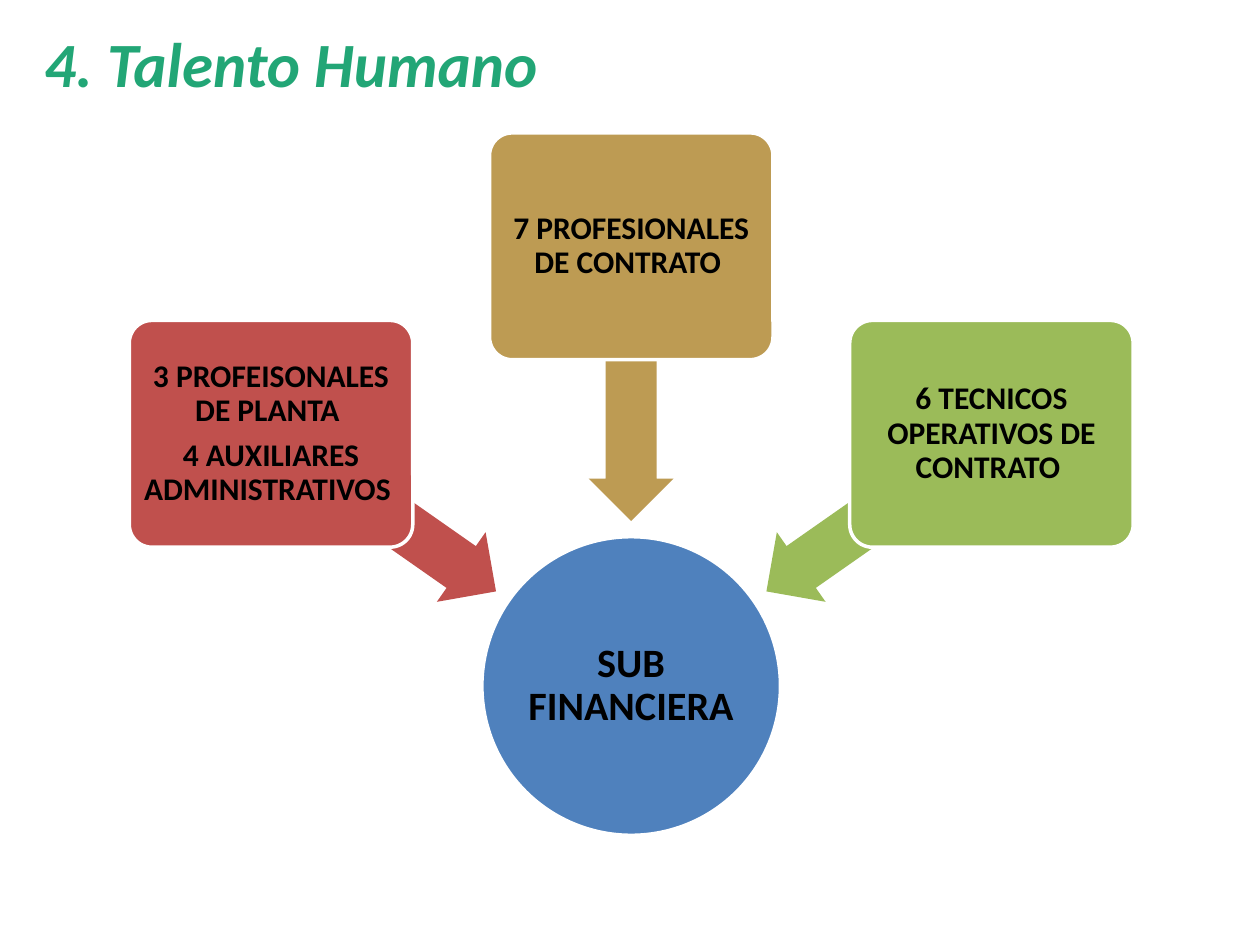
from dataclasses import dataclass
from math import cos, radians, sin

from pptx import Presentation
from pptx.dml.color import RGBColor
from pptx.enum.shapes import MSO_SHAPE
from pptx.enum.text import MSO_ANCHOR, PP_ALIGN
from pptx.shapes.autoshape import Shape
from pptx.slide import Slide
from pptx.util import Inches, Pt

WIDE, HIGH = 10, 7.5


@dataclass(frozen=True)
class Theme:
    font: str = "Calibri"
    ink: str = "000000"
    edge: str = "FFFFFF"
    title: str = "22A676"
    hub: str = "4F81BD"
    title_size: int = 36
    hub_size: int = 23
    box_size: int = 18


@dataclass(frozen=True)
class Branch:
    angle: int  # degrees clockwise from the right of the hub
    fill: str
    lines: tuple[str, ...]


THEME = Theme()
HUB = (0.501 * WIDE, 0.726 * HIGH)
HUB_SIZE = (0.237 * WIDE, 0.237 * WIDE)
BOX_SIZE = (0.225 * WIDE, 0.24 * HIGH)
ARROW_SIZE = (0.218 * WIDE, 0.09 * HIGH)
BOX_REACH = 0.349 * WIDE
ARROW_REACH = BOX_REACH - ARROW_SIZE[0] / 2

BRANCHES = (
    Branch(215, "C0504D", ("3 PROFEISONALES DE PLANTA ", "4 AUXILIARES ADMINISTRATIVOS ")),
    Branch(270, "BD9B53", ("7 PROFESIONALES DE CONTRATO ",)),
    Branch(325, "9BBB59", ("6 TECNICOS OPERATIVOS DE CONTRATO ",)),
)


def apply(target: object, values: dict) -> None:
    for name, value in values.items():
        setattr(target, name, value)


def style(font: object, size: int, color: str, italic: bool = False) -> None:
    apply(font, dict(name=THEME.font, size=Pt(size), bold=True, italic=italic))
    font.color.rgb = RGBColor.from_string(color)


def inset(frame: object, side: float, end: float) -> None:
    apply(frame, dict(
        margin_left=Inches(side), margin_right=Inches(side),
        margin_top=Inches(end), margin_bottom=Inches(end),
        vertical_anchor=MSO_ANCHOR.MIDDLE, word_wrap=True))


def orbit(angle: int, reach: float) -> tuple[float, float]:
    """Point at a given angle and distance from the hub's centre."""
    turn = radians(angle)
    return HUB[0] + reach * cos(turn), HUB[1] + reach * sin(turn)


def block(slide: Slide, kind: MSO_SHAPE, centre: tuple[float, float],
          size: tuple[float, float], fill: str, edged: bool = True) -> Shape:
    """Add a filled shape placed by its centre."""
    (x, y), (w, h) = centre, size
    shape = slide.shapes.add_shape(
        kind, *map(Inches, (x - w / 2, y - h / 2, w, h)))
    shape.shadow.inherit = False
    shape.fill.solid()
    shape.fill.fore_color.rgb = RGBColor.from_string(fill)
    if edged:
        shape.line.color.rgb = RGBColor.from_string(THEME.edge)
        shape.line.width = Pt(2)
    else:
        shape.line.fill.background()
    return shape


def label(shape: Shape, lines: tuple[str, ...], size: int, pad: float) -> None:
    frame = shape.text_frame
    inset(frame, pad, pad)
    frame.text = "\n".join(lines)
    for para in frame.paragraphs:
        apply(para, dict(alignment=PP_ALIGN.CENTER, line_spacing=0.9,
                         space_after=Pt(0.35 * size)))
        style(para.runs[0].font, size, THEME.ink)


def draw_branch(slide: Slide, branch: Branch) -> None:
    arrow = block(slide, MSO_SHAPE.LEFT_ARROW, orbit(branch.angle, ARROW_REACH),
                  ARROW_SIZE, branch.fill, edged=False)
    arrow.rotation = branch.angle
    arrow.adjustments[0] = 0.6
    box = block(slide, MSO_SHAPE.ROUNDED_RECTANGLE,
                orbit(branch.angle, BOX_REACH), BOX_SIZE, branch.fill)
    box.adjustments[0] = 0.1
    label(box, branch.lines, THEME.box_size, 0.04)


def draw_title(slide: Slide, text: str) -> None:
    title = slide.shapes.title
    apply(title, dict(left=Inches(0.028 * WIDE), top=Inches(0.003 * HIGH),
                      width=Inches(0.85 * WIDE), height=Inches(0.125 * HIGH)))
    inset(title.text_frame, 0.07, 0.04)
    title.text_frame.text = text
    para = title.text_frame.paragraphs[0]
    para.alignment = PP_ALIGN.LEFT
    style(para.runs[0].font, THEME.title_size, THEME.title, italic=True)


def main() -> None:
    deck = Presentation()
    apply(deck, dict(slide_width=Inches(WIDE), slide_height=Inches(HIGH)))
    slide = deck.slides.add_slide(deck.slide_layouts.get_by_name("Title Only"))
    draw_title(slide, "4. Talento Humano")
    hub = block(slide, MSO_SHAPE.OVAL, HUB, HUB_SIZE, THEME.hub)
    label(hub, ("SUB FINANCIERA ",), THEME.hub_size, 0.02)
    for branch in BRANCHES:
        draw_branch(slide, branch)
    deck.save("out.pptx")


if __name__ == "__main__":
    main()
